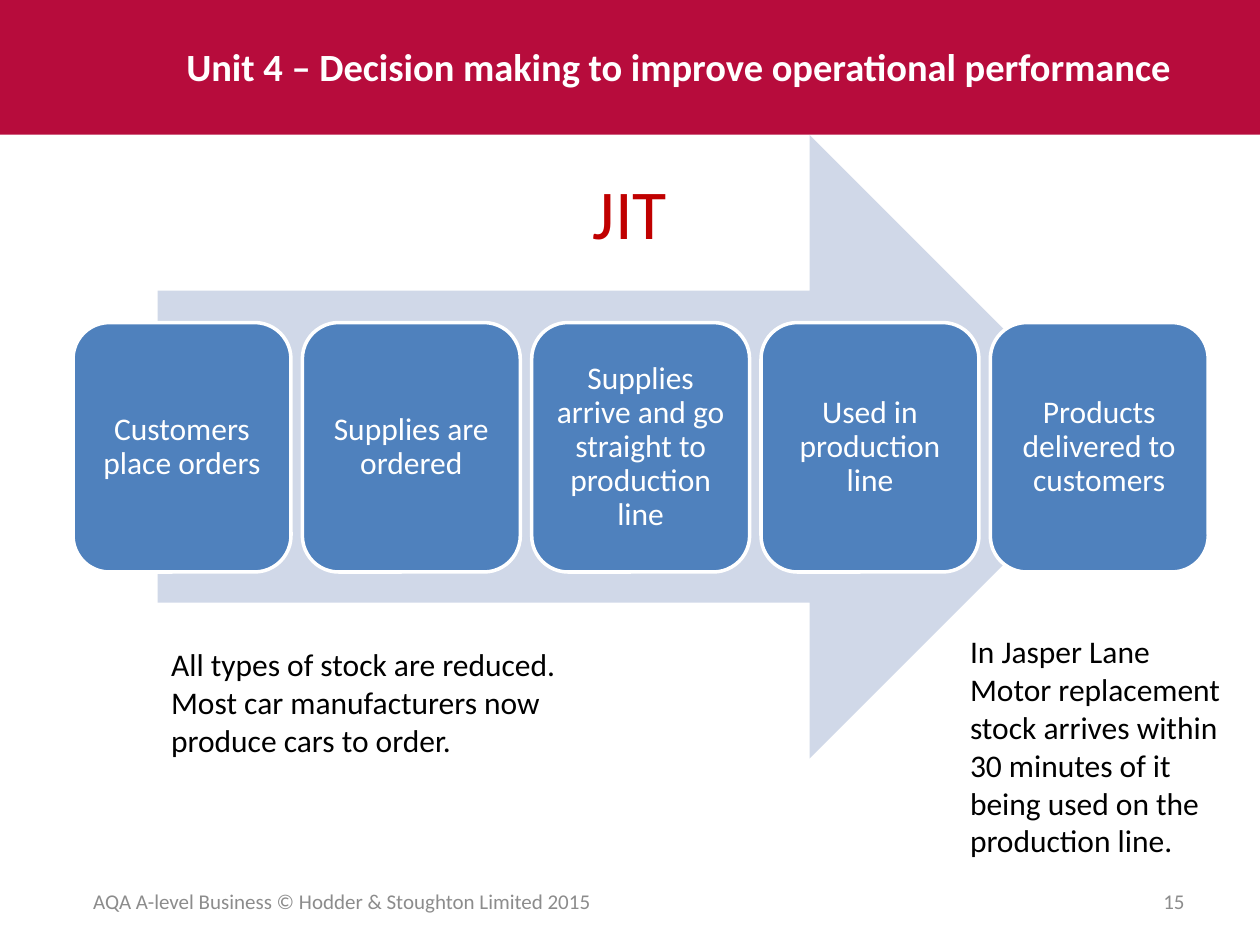
"""Build the slide on just-in-time production as a five-step process."""
import pptx
import pptx.util
import pptx.dml.color
import pptx.enum.shapes
import pptx.enum.text

Inches = pptx.util.Inches
SHAPES = pptx.enum.shapes.MSO_SHAPE
ALIGN = pptx.enum.text.PP_ALIGN
ANCHOR = pptx.enum.text.MSO_ANCHOR

THEME = {
    "font": "Calibri",
    "banner": "B70C3C", "heading": "C00000", "arrow": "D0D8E8", "step": "4F81BD",
    "light": "FFFFFF", "dark": "000000", "muted": "8C8C8C",
    "heading_size": 40, "unit_size": 22, "body_size": 18, "footer_size": 12,
}

HEADING = "JIT"
STEPS = [
    "Customers place orders",
    "Supplies are ordered",
    "Supplies arrive and go straight to production line",
    "Used in production line",
    "Products delivered to customers",
]
LABELS = [
    {"text": "Unit 4 – Decision making to improve operational performance",
     "at": (1.38, 0.29, 8.19, 0.47), "size": "unit_size", "color": "light", "bold": True},
    {"text": "All types of stock are reduced.\nMost car manufacturers now produce cars to order.",
     "at": (1.26, 5.07, 3.54, 1.01), "size": "body_size", "color": "dark"},
    {"text": "In Jasper Lane Motor replacement stock arrives within 30 minutes of it "
             "being used on the production line.",
     "at": (7.6, 4.97, 2.28, 1.92), "size": "body_size", "color": "dark"},
    {"text": "AQA A-level Business © Hodder & Stoughton Limited 2015",
     "at": (0.51, 6.95, 4.41, 0.4), "size": "footer_size", "color": "muted",
     "align": ALIGN.CENTER, "anchor": ANCHOR.MIDDLE},
    {"text": "15", "at": (7.17, 6.95, 2.33, 0.4), "size": "footer_size", "color": "muted",
     "align": ALIGN.RIGHT, "anchor": ANCHOR.MIDDLE},
]

STEP_LEFT, STEP_TOP, STEP_WIDTH, STEP_HEIGHT = 0.58, 2.56, 1.73, 1.98
STEP_PITCH = 1.82
STEP_INSET = 0.07


def color(name):
    return pptx.dml.color.RGBColor.from_string(THEME[name])


def write(frame, text, size, ink, align=ALIGN.LEFT, anchor=ANCHOR.TOP, bold=False):
    frame.text = text
    frame.word_wrap = True
    frame.vertical_anchor = anchor
    for paragraph in frame.paragraphs:
        paragraph.alignment = align
        for run in paragraph.runs:
            run.font.name = THEME["font"]
            run.font.size = pptx.util.Pt(THEME[size])
            run.font.bold = bold
            run.font.color.rgb = color(ink)


def add_filled(slide, preset, at, fill):
    shape = slide.shapes.add_shape(preset, *map(Inches, at))
    shape.shadow.inherit = False
    shape.fill.solid()
    shape.fill.fore_color.rgb = color(fill)
    shape.line.fill.background()
    return shape


def add_step(slide, index, text):
    left = STEP_LEFT + index * STEP_PITCH
    step = add_filled(slide, SHAPES.ROUNDED_RECTANGLE,
                      (left, STEP_TOP, STEP_WIDTH, STEP_HEIGHT), "step")
    step.line.color.rgb = color("light")
    step.line.width = pptx.util.Pt(2)
    frame = step.text_frame
    frame.margin_left = frame.margin_right = Inches(STEP_INSET)
    frame.margin_top = frame.margin_bottom = Inches(STEP_INSET)
    write(frame, text, "body_size", "light", ALIGN.CENTER, ANCHOR.MIDDLE)
    frame.paragraphs[0].line_spacing = 0.9


def add_label(slide, label):
    box = slide.shapes.add_textbox(*map(Inches, label["at"]))
    write(box.text_frame, label["text"], label["size"], label["color"],
          label.get("align", ALIGN.LEFT), label.get("anchor", ANCHOR.TOP),
          label.get("bold", False))


def main():
    deck = pptx.Presentation()
    deck.slide_width, deck.slide_height = Inches(10), Inches(7.5)
    slide = deck.slides.add_slide(deck.slide_layouts[5])

    heading = slide.shapes.title
    heading.left, heading.top = Inches(0.51), Inches(1.15)
    heading.width, heading.height = Inches(8.98), Inches(1.06)
    write(heading.text_frame, HEADING, "heading_size", "heading", ALIGN.CENTER, ANCHOR.MIDDLE)

    add_filled(slide, SHAPES.RECTANGLE, (0, 0, 10, 1.07), "banner")
    add_filled(slide, SHAPES.RIGHT_ARROW, (1.25, 1.07, 7.65, 4.95), "arrow")
    for index, text in enumerate(STEPS):
        add_step(slide, index, text)
    for label in LABELS:
        add_label(slide, label)

    deck.save("out.pptx")


if __name__ == "__main__":
    main()
